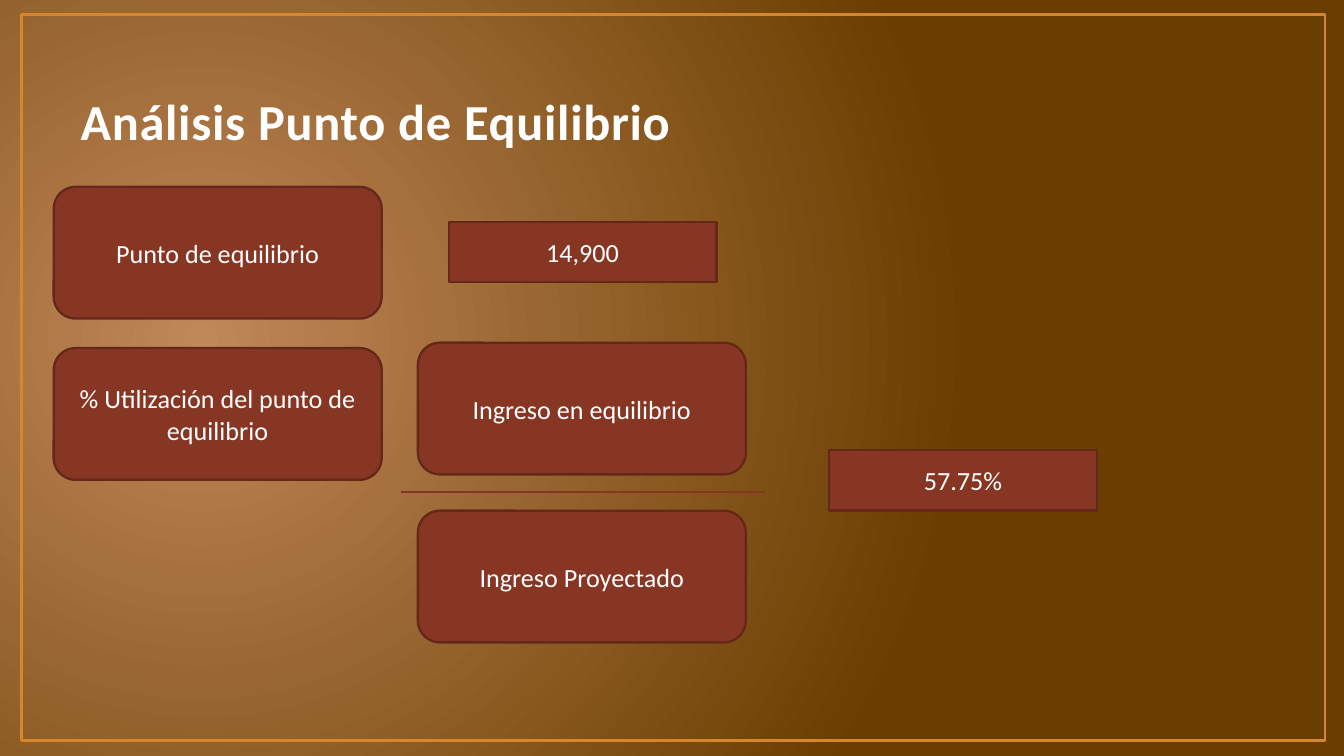
from lxml.etree import SubElement
from pptx import Presentation
from pptx.dml.color import RGBColor
from pptx.enum.shapes import MSO_CONNECTOR as Link, MSO_SHAPE as Kind
from pptx.enum.text import MSO_ANCHOR as Anchor, PP_ALIGN as Align
from pptx.oxml.ns import qn
from pptx.util import Inches, Pt

WIDE = 10
HIGH = WIDE * 9 / 16
RED, EDGE, GOLD = "873624", "64281B", "D6862D"
CARD = (2.44, 0.98)
VALUE = (1.99, 0.45)
COLS = (0.4, 3.11)
CARDS = [
    (COLS[0], 1.39, "Punto de equilibrio"),
    (COLS[0], 2.59, "% Utilización del punto de equilibrio"),
    (COLS[1], 2.55, "Ingreso en equilibrio"),
    (COLS[1], 3.8, "Ingreso Proyectado"),
]
VALUES = [(3.34, 1.65, "14,900"), (6.17, 3.35, "57.75%")]


def tint(code):
    """Turn a hex string into a colour."""
    return RGBColor.from_string(code)


def place(shape, left, top, wide, high):
    """Set the frame of a shape in inches."""
    shape.left, shape.top = Inches(left), Inches(top)
    shape.width, shape.height = Inches(wide), Inches(high)


def stroke(line, code, width):
    """Set the colour and width of a line."""
    line.color.rgb = tint(code)
    line.width = Pt(width)


def style(part, size, code, bold=False):
    """Format the runs of a paragraph."""
    for run in part.runs:
        run.font.name = "Calibri"
        run.font.size = Pt(size)
        run.font.bold = bold
        run.font.color.rgb = tint(code)


def paint(slide):
    """Fill the background with a round gradient."""
    fill = slide.background.fill
    fill.gradient()
    for stop, code, spot in zip(fill.gradient_stops, ("C08759", "693E00"), (0, 1)):
        stop.color.rgb = tint(code)
        stop.position = spot
    grad = slide.element.find(".//" + qn("a:gradFill"))
    grad.remove(grad.find(qn("a:lin")))
    ring = SubElement(grad, qn("a:path"), {"path": "circle"})
    SubElement(ring, qn("a:fillToRect"), l="15000", t="50000", r="85000", b="60000")


def frame(slide):
    """Draw the thin border round the slide."""
    box = slide.shapes.add_shape(Kind.RECTANGLE, 0, 0, 0, 0)
    place(box, 0.16, 0.11, 9.7, 5.4)
    box.shadow.inherit = False
    box.fill.background()
    stroke(box.line, GOLD, 1.5)


def head(slide, text):
    """Place and format the title."""
    title = slide.shapes.title
    place(title, 0.5, 0.23, 9, 0.94)
    body = title.text_frame
    body.text = text
    body.word_wrap = True
    body.vertical_anchor = Anchor.BOTTOM
    part = body.paragraphs[0]
    part.alignment = Align.LEFT
    style(part, 27, "FEFEFE", True)
    props = part.runs[0].font._element
    props.set("spc", "40")
    rim = SubElement(props, qn("a:ln"), w=str(Pt(1.05)))
    props.insert(0, rim)
    fill = SubElement(rim, qn("a:solidFill"))
    SubElement(fill, qn("a:srgbClr"), val="441B12")


def block(slide, kind, size, left, top, text):
    """Add a red block with centred text."""
    box = slide.shapes.add_shape(kind, 0, 0, 0, 0)
    place(box, left, top, *size)
    box.shadow.inherit = False
    box.fill.solid()
    box.fill.fore_color.rgb = tint(RED)
    stroke(box.line, EDGE, 1.25)
    body = box.text_frame
    body.text = text
    body.word_wrap = True
    body.vertical_anchor = Anchor.MIDDLE
    part = body.paragraphs[0]
    part.alignment = Align.CENTER
    style(part, 14, "FFFFFF")


def rule(slide, left, right, top):
    """Draw the fraction bar."""
    ends = [Inches(n) for n in (left, top, right, top)]
    bar = slide.shapes.add_connector(Link.STRAIGHT, *ends)
    stroke(bar.line, RED, 0.75)
    SubElement(bar.element.spPr, qn("a:effectLst"))


def main():
    """Build and save the slide."""
    deck = Presentation()
    deck.slide_width, deck.slide_height = Inches(WIDE), Inches(HIGH)
    slide = deck.slides.add_slide(deck.slide_layouts[5])
    paint(slide)
    frame(slide)
    head(slide, "Análisis Punto de Equilibrio")
    for card in CARDS:
        block(slide, Kind.FLOWCHART_ALTERNATE_PROCESS, CARD, *card)
    for value in VALUES:
        block(slide, Kind.RECTANGLE, VALUE, *value)
    rule(slide, 2.98, 5.69, 3.66)
    deck.save("out.pptx")


if __name__ == "__main__":
    main()
